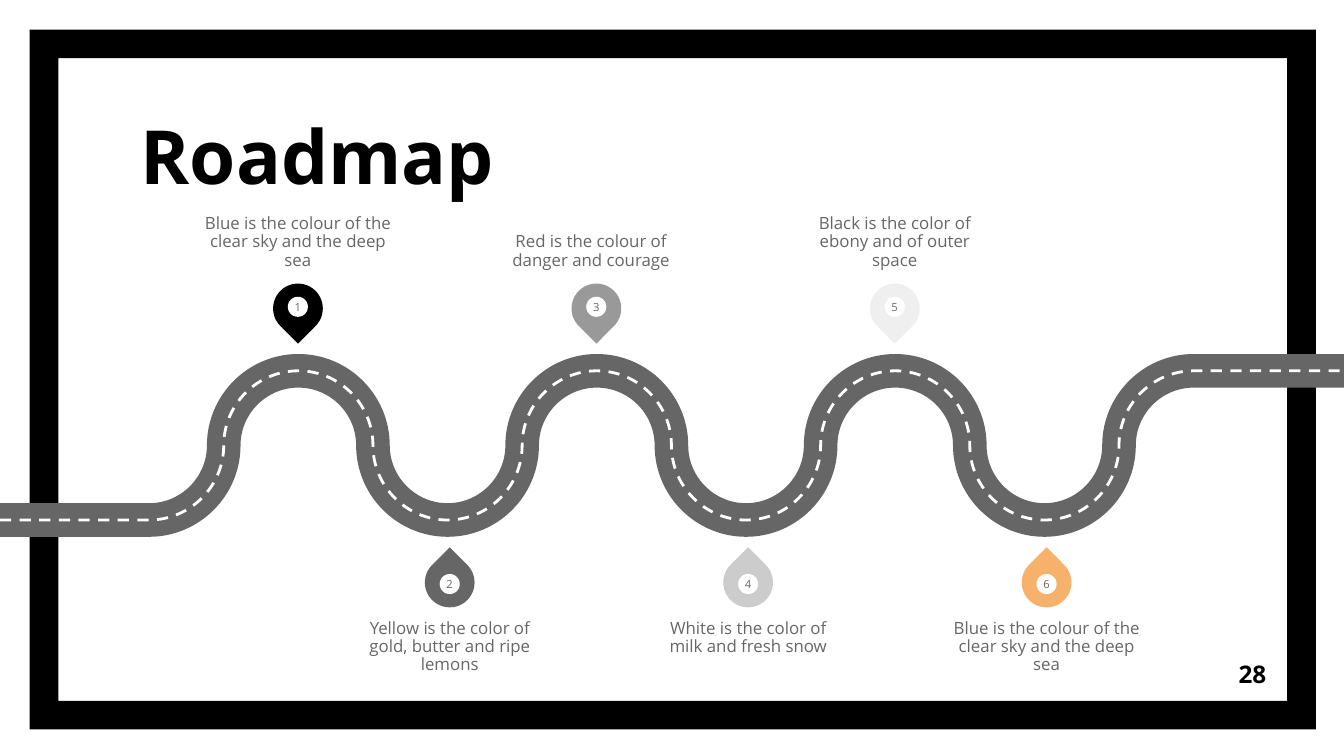
"""Build a roadmap slide with a winding road and six numbered milestones."""
from dataclasses import dataclass
from math import cos, pi

from lxml import etree
from pptx import Presentation
from pptx.dml.color import RGBColor
from pptx.enum.dml import MSO_LINE
from pptx.enum.shapes import MSO_SHAPE
from pptx.enum.text import MSO_ANCHOR, MSO_AUTO_SIZE, PP_ALIGN
from pptx.oxml.ns import qn
from pptx.util import Cm, Pt

FRAME, TEARDROP, OVAL = MSO_SHAPE.FRAME, MSO_SHAPE.TEAR, MSO_SHAPE.OVAL
TOP, MIDDLE, BOTTOM = MSO_ANCHOR.TOP, MSO_ANCHOR.MIDDLE, MSO_ANCHOR.BOTTOM
LEFT, CENTER, RIGHT = PP_ALIGN.LEFT, PP_ALIGN.CENTER, PP_ALIGN.RIGHT
DASH, NO_AUTOFIT = MSO_LINE.DASH, MSO_AUTO_SIZE.NONE


@dataclass(frozen=True)
class Theme:
    font: str = "Open Sans"
    ink: str = "000000"
    gray: str = "666666"
    paper: str = "FFFFFF"
    pins: tuple = ("000000", "666666", "999999", "CCCCCC", "EFEFEF", "F6B26B")
    title: float = 40
    page: float = 13
    callout: float = 9
    number: float = 6
    road: float = 18
    lane: float = 1.5


theme = Theme()


def write(frame, text, size, color, align, anchor, inset=0, bold=False, spacing=1.0):
    frame.word_wrap = True
    frame.auto_size = NO_AUTOFIT
    frame.vertical_anchor = anchor
    frame.margin_left = frame.margin_right = Cm(inset)
    frame.margin_top = frame.margin_bottom = Cm(inset)
    paragraph = frame.paragraphs[0]
    paragraph.alignment = align
    paragraph.line_spacing = spacing
    run = paragraph.add_run()
    run.text = text
    run.font.name = theme.font
    run.font.size = Pt(size)
    run.font.bold = bold
    run.font.color.rgb = RGBColor.from_string(color)


def paint(shape, color):
    shape.shadow.inherit = False
    shape.fill.solid()
    shape.fill.fore_color.rgb = RGBColor.from_string(color)
    shape.line.fill.background()


deck = Presentation()
deck.slide_width, deck.slide_height = Cm(25.4), Cm(14.29)
slide = deck.slides.add_slide(deck.slide_layouts[5])
shapes = slide.shapes

border = shapes.add_shape(FRAME, Cm(0.56), Cm(0.56), Cm(24.31), Cm(13.23))
border.adjustments[0] = 0.041
paint(border, theme.ink)

heading = shapes.title
heading.left, heading.top, heading.width, heading.height = Cm(2.41), Cm(2.36), Cm(14.15), Cm(1.68)
write(heading.text_frame, "Roadmap", theme.title, theme.ink, LEFT, BOTTOM, 0.25, True, 0.9)

page = shapes.add_textbox(Cm(22.66), Cm(12.19), Cm(1.52), Cm(1.09))
write(page.text_frame, "28", theme.page, theme.ink, RIGHT, MIDDLE, 0.25, True)

RADIUS, BEND_START, ROAD_MIDDLE, QUARTERS, PULL = 1.41, 2.82, 8.42, 14, 0.55
bends = [(BEND_START + RADIUS * i, ROAD_MIDDLE + RADIUS * cos(i * pi / 2))
         for i in range(QUARTERS + 1)]
curve_points = []
for i, ((x0, y0), (x1, y1)) in enumerate(zip(bends, bends[1:])):
    reach_x, reach_y = PULL * (x1 - x0), PULL * (y1 - y0)
    if i % 2 == 0:
        curve_points += [(x0 + reach_x, y0), (x1, y1 - reach_y), (x1, y1)]
    else:
        curve_points += [(x0, y0 + reach_y), (x1 - reach_x, y1), (x1, y1)]
route = [bends[0], *curve_points, (25.4, bends[-1][1])]

for color, width, dash in ((theme.gray, theme.road, None), (theme.paper, theme.lane, DASH)):
    builder = shapes.build_freeform(Cm(0), Cm(bends[0][1]))
    builder.add_line_segments([(Cm(x), Cm(y)) for x, y in route], close=False)
    road = builder.convert_to_shape()
    road.shadow.inherit = False
    road.fill.background()
    road.line.color.rgb = RGBColor.from_string(color)
    road.line.width = Pt(width)
    if dash:
        road.line.dash_style = dash
    segments = list(road.element.iter(qn("a:lnTo")))[1:-1]
    for start in range(0, len(segments), 3):
        curve = etree.Element(qn("a:cubicBezTo"))
        segments[start].addprevious(curve)
        for segment in segments[start:start + 3]:
            curve.append(segment[0])
            segment.getparent().remove(segment)

milestones = (
    ("Blue is the colour of the clear sky and the deep sea", 0),
    ("Yellow is the color of gold, butter and ripe lemons", 0),
    ("Red is the colour of danger and courage", -0.1),
    ("White is the color of milk and fresh snow", 0),
    ("Black is the color of ebony and of outer space", 0),
    ("Blue is the colour of the clear sky and the deep sea", 0),
)
PIN, DOT, CALLOUT_WIDTH, CALLOUT_HEIGHT, PERIOD = 0.94, 0.38, 3.58, 1.47, 5.64
sides = (
    (5.63, 5.83, 5.8, 135, 3.63, BOTTOM),
    (8.5, 11.01, 11.04, 315, 11.71, TOP),
)
for i, (message, nudge) in enumerate(milestones):
    first, pin_y, dot_y, rotation, callout_top, anchor = sides[i % 2]
    center = first + PERIOD * (i // 2)
    marker = shapes.add_group_shape().shapes
    pin = marker.add_shape(TEARDROP, Cm(center - PIN / 2), Cm(pin_y - PIN / 2), Cm(PIN), Cm(PIN))
    pin.rotation = rotation
    paint(pin, theme.pins[i])
    dot = marker.add_shape(OVAL, Cm(center - DOT / 2), Cm(dot_y - DOT / 2), Cm(DOT), Cm(DOT))
    paint(dot, theme.paper)
    write(dot.text_frame, str(i + 1), theme.number, theme.gray, CENTER, MIDDLE)
    callout = shapes.add_textbox(Cm(center + nudge - CALLOUT_WIDTH / 2), Cm(callout_top),
                                 Cm(CALLOUT_WIDTH), Cm(CALLOUT_HEIGHT))
    write(callout.text_frame, message, theme.callout, theme.gray, CENTER, anchor, spacing=0.9)

deck.save("out.pptx")
